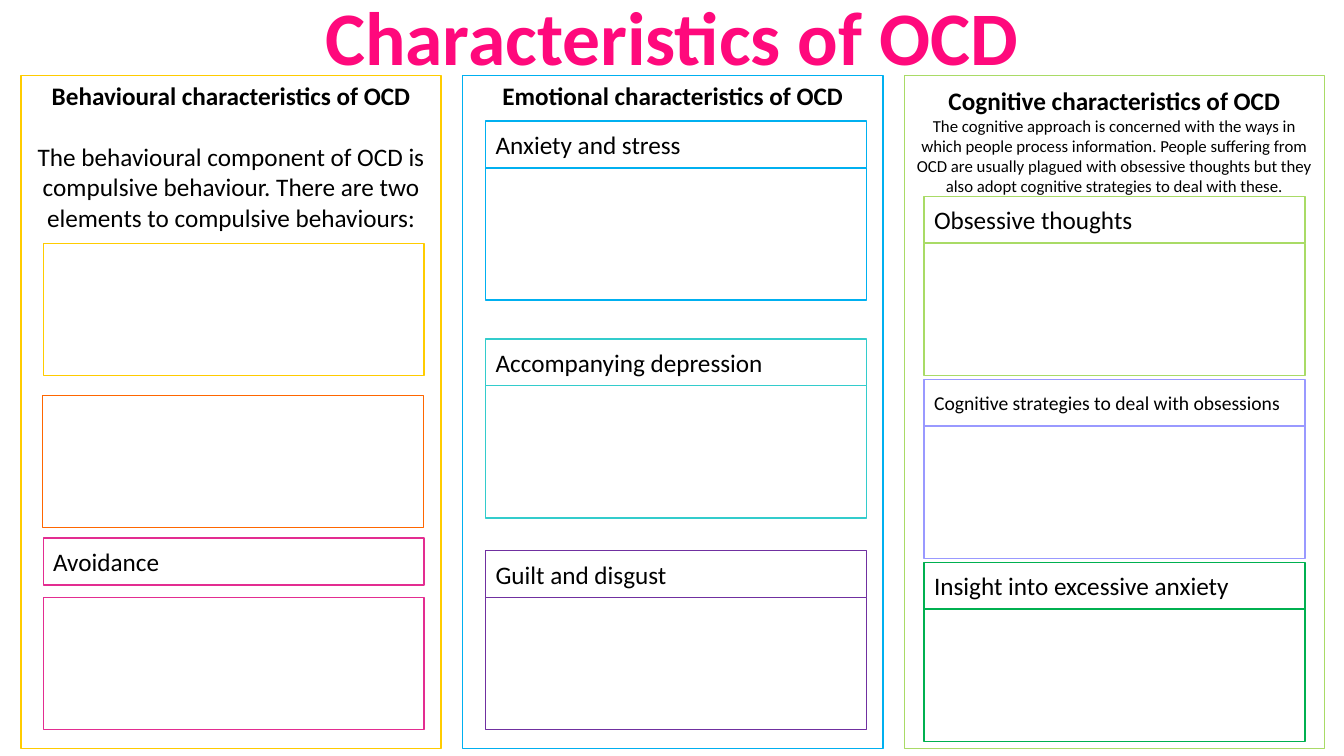
from pptx import Presentation
from pptx import util as u
from pptx.dml.color import RGBColor
from pptx.enum import shapes, text

COLOURS = {
    "black": "000000", "white": "FFFFFF", "pink": "FF097C", "magenta": "E32D91",
    "yellow": "FFCC00", "orange": "FF6600", "blue": "00B0F0", "teal": "33CCCC",
    "purple": "7030A0", "lime": "A9DB66", "lilac": "9999FF", "green": "00B050",
}
PANEL_LEFT, PANEL_PITCH, PANEL_TOP = 0.53, 11.13, 1.9
PANEL_W, PANEL_H = 10.59, 16.97
BOX_W, BOX_H, LABEL_H = 9.6, 3.33, 1.18

PANELS = [
    ("Behavioural characteristics of OCD",
     "The behavioural component of OCD is compulsive behaviour. "
     "There are two elements to compulsive behaviours:", 18, 22, 0.13),
    ("Emotional characteristics of OCD", "", 18, 0, 0.13),
    ("Cognitive characteristics of OCD",
     "The cognitive approach is concerned with the ways in which people process "
     "information. People suffering from OCD are usually plagued with obsessive "
     "thoughts but they also adopt cognitive strategies to deal with these.", 12, 0, 0.25),
]
ANSWER_BOXES = [
    (1.09, 6.13, "yellow"),
    (1.07, 9.96, "orange"),
    (1.09, 15.06, "magenta"),
]
LABELLED_BOXES = [
    (12.24, 3.05, "Anxiety and stress", 18, "blue"),
    (12.24, 8.54, "Accompanying depression", 18, "teal"),
    (12.24, 13.88, "Guilt and disgust", 18, "purple"),
    (23.29, 4.95, "Obsessive thoughts", 18, "lime"),
    (23.29, 9.56, "Cognitive strategies to deal with obsessions", 14, "lilac"),
    (23.29, 14.17, "Insight into excessive anxiety", 18, "green"),
]


def rgb(name):
    """Return the named colour."""
    return RGBColor.from_string(COLOURS[name])


def add_text(p, words, size=18, bold=False, colour="black",
             align=text.PP_ALIGN.LEFT, before=0):
    """Write one formatted run into a paragraph."""
    p.alignment = align
    p.space_before = u.Pt(before)
    r = p.add_run()
    r.text = words
    r.font.name = "Calibri"
    r.font.size = u.Pt(size)
    r.font.bold = bold
    r.font.color.rgb = rgb(colour)


def add_box(s, left, top, width, height, colour):
    """Add a white rectangle with a thin coloured outline."""
    sp = s.shapes.add_shape(shapes.MSO_SHAPE.RECTANGLE, u.Cm(left), u.Cm(top),
                            u.Cm(width), u.Cm(height))
    sp.shadow.inherit = False
    sp.fill.solid()
    sp.fill.fore_color.rgb = rgb("white")
    sp.line.color.rgb = rgb(colour)
    sp.line.width = u.Pt(1)
    return sp


def add_title(s, words):
    """Fill and place the slide title."""
    sp = s.shapes.title
    sp.left, sp.top, sp.width, sp.height = u.Cm(0), u.Cm(-0.38), u.Cm(33.87), u.Cm(2.56)
    tf = sp.text_frame
    tf.auto_size = text.MSO_AUTO_SIZE.NONE
    tf.vertical_anchor = text.MSO_ANCHOR.TOP
    add_text(tf.paragraphs[0], words, size=54, bold=True, colour="pink",
             align=text.PP_ALIGN.CENTER)


def add_panel(s, column, colour, heading, intro, size, before, inset):
    """Add a column panel with its heading and optional introduction."""
    sp = add_box(s, PANEL_LEFT + column * PANEL_PITCH, PANEL_TOP, PANEL_W, PANEL_H, colour)
    tf = sp.text_frame
    tf.word_wrap = True
    tf.vertical_anchor = text.MSO_ANCHOR.TOP
    tf.margin_top = u.Cm(inset)
    add_text(tf.paragraphs[0], heading, bold=True, align=text.PP_ALIGN.CENTER)
    if intro:
        add_text(tf.add_paragraph(), intro, size=size, before=before,
                 align=text.PP_ALIGN.CENTER)


def add_label(s, left, top, words, size, colour):
    """Add a label bar."""
    tf = add_box(s, left, top, BOX_W, LABEL_H, colour).text_frame
    tf.word_wrap = True
    tf.vertical_anchor = text.MSO_ANCHOR.MIDDLE
    add_text(tf.paragraphs[0], words, size=size)


def main():
    """Build the worksheet slide."""
    prs = Presentation()
    prs.slide_width, prs.slide_height = u.Cm(33.87), u.Cm(19.05)
    s = prs.slides.add_slide(prs.slide_layouts[5])
    add_title(s, "Characteristics of OCD")
    for column, (colour, panel) in enumerate(zip(("yellow", "blue", "lime"), PANELS)):
        add_panel(s, column, colour, *panel)
    for left, top, colour in ANSWER_BOXES:
        add_box(s, left, top, BOX_W, BOX_H, colour)
    add_label(s, 1.09, 13.56, "Avoidance", 18, "magenta")
    for left, top, words, size, colour in LABELLED_BOXES:
        add_box(s, left, top + LABEL_H, BOX_W, BOX_H, colour)
        add_label(s, left, top, words, size, colour)
    prs.save("out.pptx")


if __name__ == "__main__":
    main()
